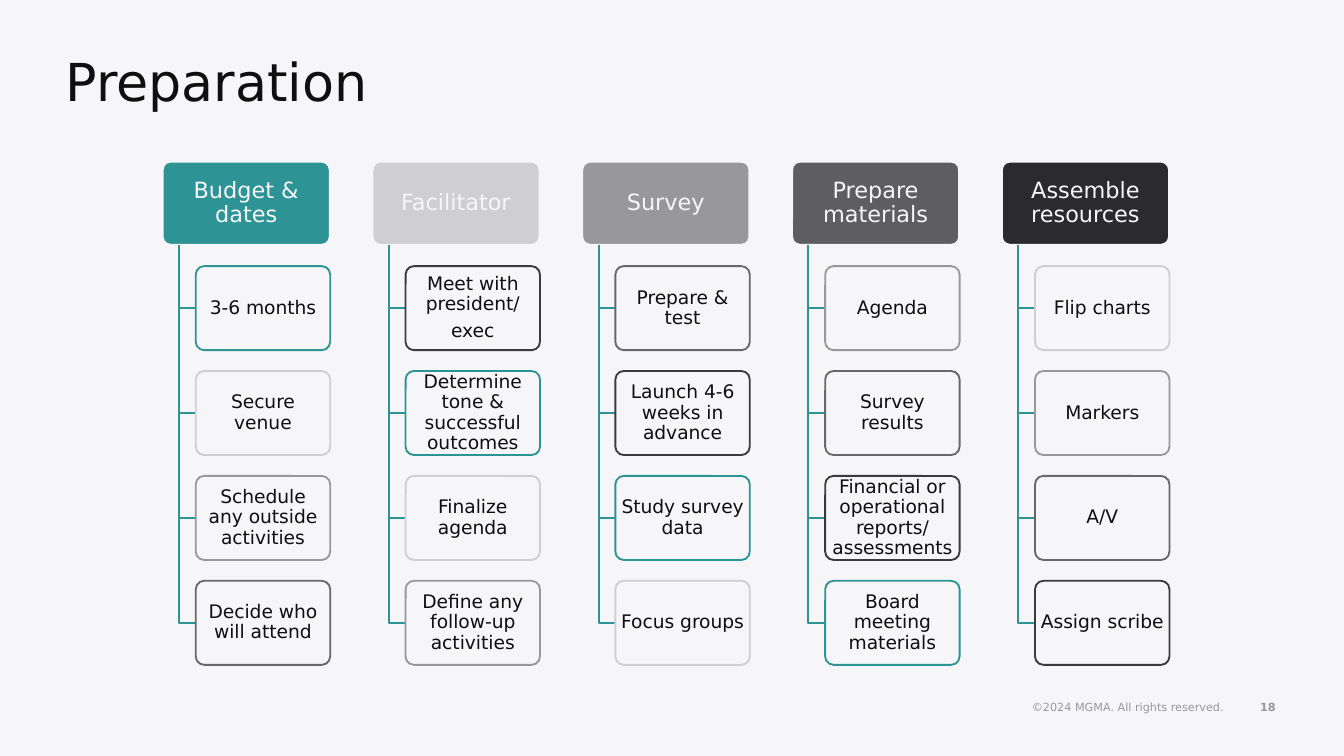
from dataclasses import dataclass

from lxml import etree
from pptx import Presentation
from pptx.dml.color import RGBColor
from pptx.enum.shapes import MSO_SHAPE
from pptx.enum.text import MSO_ANCHOR, PP_ALIGN
from pptx.oxml.ns import qn
from pptx.shapes.autoshape import Shape
from pptx.slide import Slide
from pptx.text.text import TextFrame
from pptx.util import Pt

ROUND_RECT = MSO_SHAPE.ROUNDED_RECTANGLE
TOP, MIDDLE = MSO_ANCHOR.TOP, MSO_ANCHOR.MIDDLE
LEFT, CENTER, RIGHT = PP_ALIGN.LEFT, PP_ALIGN.CENTER, PP_ALIGN.RIGHT

FONT = "DejaVu Sans"
PAPER = RGBColor(0xF6, 0xF6, 0xF8)
INK = RGBColor(0x0F, 0x0F, 0x0F)
TEAL = RGBColor(0x2E, 0x93, 0x95)
SILVER = RGBColor(0xCF, 0xCF, 0xD1)
GRAY = RGBColor(0x98, 0x98, 0x9C)
DIM = RGBColor(0x68, 0x68, 0x6B)
CHARCOAL = RGBColor(0x3A, 0x3A, 0x3F)
SLATE = RGBColor(0x5E, 0x5E, 0x60)
BLACK = RGBColor(0x2B, 0x2B, 0x2F)
OUTLINES = [TEAL, SILVER, GRAY, DIM, CHARCOAL]

COLUMN_X, COLUMN_PITCH = 86.9, 112.4
HEADER_Y, HEADER_W, BOX_H = 86.4, 90, 45
TASK_Y, TASK_W, ROW_PITCH = 142.6, 72, 56.2
TRUNK_INDENT, TASK_INDENT = 9, 18


@dataclass
class Stage:
    title: str
    fill: RGBColor
    tasks: list[str]


STAGES = [
    Stage("Budget & dates", TEAL,
          ["3-6 months", "Secure venue", "Schedule any outside activities",
           "Decide who will attend"]),
    Stage("Facilitator", SILVER,
          ["Meet with president/\nexec", "Determine tone & successful outcomes",
           "Finalize agenda", "Define any follow-up activities"]),
    Stage("Survey", GRAY,
          ["Prepare & test", "Launch 4-6 weeks in advance",
           "Study survey data", "Focus groups"]),
    Stage("Prepare materials", SLATE,
          ["Agenda", "Survey results",
           "Financial or operational reports/ assessments",
           "Board meeting materials"]),
    Stage("Assemble resources", BLACK,
          ["Flip charts", "Markers", "A/V", "Assign scribe"]),
]


def write(tf: TextFrame, text: str, *, size: float, color: RGBColor,
          align: PP_ALIGN = LEFT, anchor: MSO_ANCHOR = MIDDLE,
          bold: bool = False, spacing: float = 1.0, after: float = 0) -> None:
    tf.word_wrap = True
    tf.vertical_anchor = anchor
    for i, line in enumerate(text.split("\n")):
        p = tf.add_paragraph() if i else tf.paragraphs[0]
        p.alignment = align
        p.line_spacing = spacing
        p.space_after = Pt(after)
        r = p.add_run()
        r.text = line
        r.font.name = FONT
        r.font.size = Pt(size)
        r.font.bold = bold
        r.font.color.rgb = color


def add_text(s: Slide, x: float, y: float, w: float, h: float,
             text: str, **fmt) -> None:
    tb = s.shapes.add_textbox(Pt(x), Pt(y), Pt(w), Pt(h))
    write(tb.text_frame, text, **fmt)


def add_box(s: Slide, x: float, y: float, w: float, text: str, *,
            fill: RGBColor, line: RGBColor, line_w: float,
            size: float, color: RGBColor) -> Shape:
    sp = s.shapes.add_shape(ROUND_RECT, Pt(x), Pt(y), Pt(w), Pt(BOX_H))
    sp.adjustments[0] = 0.1
    sp.shadow.inherit = False
    sp.fill.solid()
    sp.fill.fore_color.rgb = fill
    sp.line.color.rgb = line
    sp.line.width = Pt(line_w)
    tf = sp.text_frame
    tf.margin_left = tf.margin_right = Pt(size * 0.15)
    tf.margin_top = tf.margin_bottom = Pt(size * 0.1)
    write(tf, text, size=size, color=color, align=CENTER,
          spacing=0.9, after=size * 0.35)
    return sp


def set_opacity(sp: Shape, percent: int) -> None:
    clr = sp.fill._xPr.find(qn("a:solidFill"))[0]
    etree.SubElement(clr, qn("a:alpha")).set("val", str(percent * 1000))


def add_elbow(s: Slide, x: float, y: float, end_x: float, end_y: float) -> None:
    fb = s.shapes.build_freeform(Pt(x), Pt(y))
    fb.add_line_segments([(Pt(x), Pt(end_y)), (Pt(end_x), Pt(end_y))], close=False)
    sp = fb.convert_to_shape()
    sp.shadow.inherit = False
    sp.fill.background()
    sp.line.color.rgb = TEAL
    sp.line.width = Pt(1)


def add_stage(s: Slide, col: int, stage: Stage) -> None:
    x = COLUMN_X + col * COLUMN_PITCH
    add_box(s, x, HEADER_Y, HEADER_W, stage.title, fill=stage.fill,
            line=PAPER, line_w=1.5, size=12, color=PAPER)
    for row, task in enumerate(stage.tasks):
        y = TASK_Y + row * ROW_PITCH
        outline = OUTLINES[(col * len(stage.tasks) + row) % len(OUTLINES)]
        add_elbow(s, x + TRUNK_INDENT, HEADER_Y + BOX_H,
                  x + TASK_INDENT, y + BOX_H / 2)
        sp = add_box(s, x + TASK_INDENT, y, TASK_W, task, fill=PAPER,
                     line=outline, line_w=1, size=10, color=INK)
        set_opacity(sp, 90)


def main() -> None:
    prs = Presentation()
    prs.slide_width, prs.slide_height = Pt(720), Pt(405)
    s = prs.slides.add_slide(prs.slide_layouts[6])
    s.background.fill.solid()
    s.background.fill.fore_color.rgb = PAPER

    add_text(s, 461.5, 368, 201, 21.6, "©2024 MGMA. All rights reserved.",
             size=6, color=GRAY, align=RIGHT)
    add_text(s, 647.3, 368, 43.2, 21.6, "18",
             size=6, color=GRAY, align=RIGHT, bold=True)
    for col, stage in enumerate(STAGES):
        add_stage(s, col, stage)
    add_text(s, 28.1, 26.6, 484.6, 41, "Preparation",
             size=28, color=INK, anchor=TOP, spacing=0.9)
    prs.save("out.pptx")


if __name__ == "__main__":
    main()
